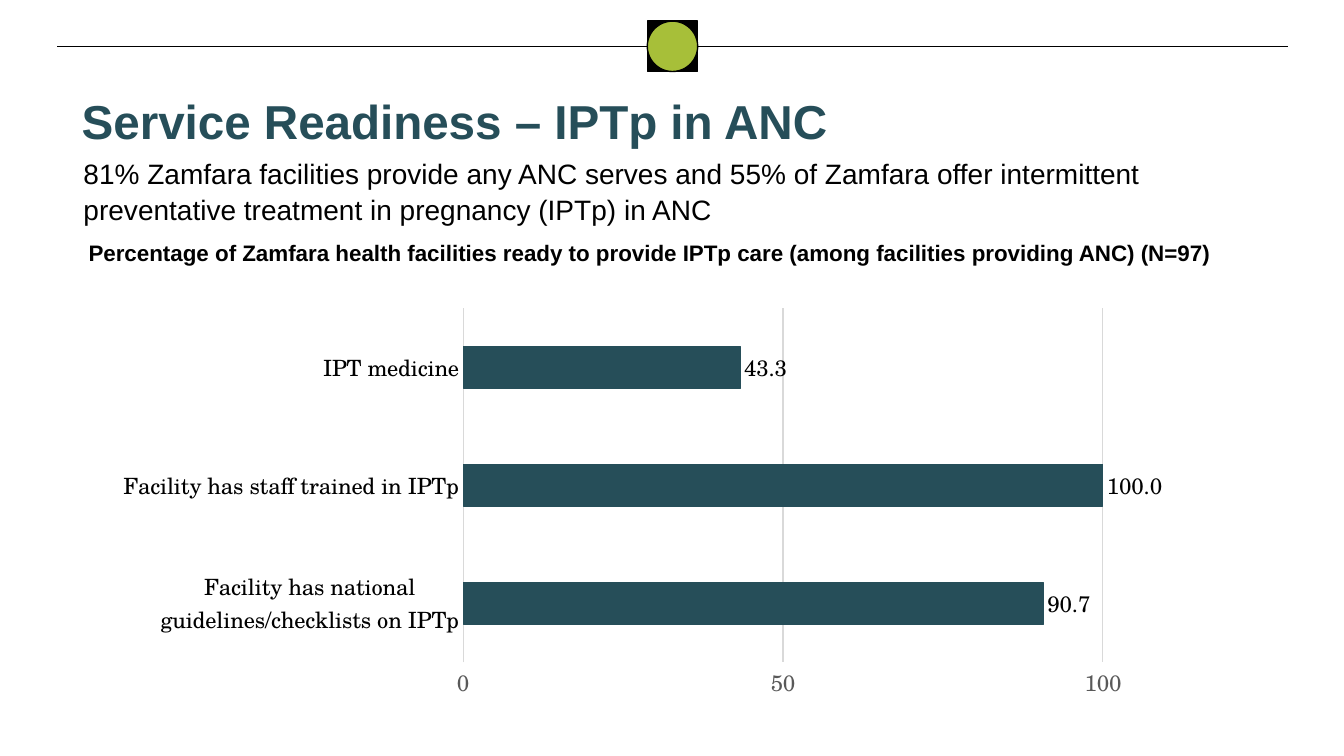
from lxml import etree
from pptx import Presentation
from pptx import util as u
from pptx.chart.data import CategoryChartData
from pptx.dml.color import RGBColor
from pptx.enum import chart as ce, shapes, text
from pptx.oxml import parse_xml
from pptx.oxml.ns import nsdecls, qn

PX = 9144  # EMU in one px, 100 px to the inch


class Theme:
    teal = RGBColor.from_string("264E59")
    lime = RGBColor.from_string("A7BF39")
    ink = RGBColor.from_string("000000")
    gray = RGBColor.from_string("595959")
    grid = RGBColor.from_string("D9D9D9")
    sans, serif = "Arial", "TeX Gyre Schola"
    title, lead, label = u.Pt(34), u.Pt(20), u.Pt(16)
    thin = u.Pt(0.75)


def style(font, name, size, color, bold=False):
    font.name, font.size, font.bold = name, size, bold
    font.color.rgb = color


def write(shape, words, size, color, bold, after=0, space=1.05):
    frame = shape.text_frame
    frame.word_wrap = True
    frame.auto_size = text.MSO_AUTO_SIZE.NONE
    frame.vertical_anchor = text.MSO_ANCHOR.TOP
    frame.text = words
    par = frame.paragraphs[0]
    par.alignment = text.PP_ALIGN.LEFT
    par.line_spacing, par.space_after = space, u.Pt(after)
    style(par.font, Theme.sans, size, color, bold)


deck = Presentation()
deck.slide_width, deck.slide_height = 1333 * PX, 750 * PX
slide = deck.slides.add_slide(deck.slide_layouts[5])

# Top rule with its round badge
rule = slide.shapes.add_connector(
    shapes.MSO_CONNECTOR.STRAIGHT, 57 * PX, 46 * PX, 1277 * PX, 46 * PX)
rule.line.color.rgb, rule.line.width = Theme.ink, Theme.thin
etree.SubElement(rule._element.spPr, qn("a:effectLst"))

for kind, fill in ((shapes.MSO_SHAPE.RECTANGLE, Theme.ink),
                   (shapes.MSO_SHAPE.OVAL, Theme.lime)):
    badge = slide.shapes.add_shape(kind, 642 * PX, 21 * PX, 50 * PX, 50 * PX)
    badge.shadow.inherit = False
    badge.fill.solid()
    badge.fill.fore_color.rgb = fill
    badge.line.color.rgb, badge.line.width = Theme.ink, u.Pt(1)

# Title
head = slide.shapes.title
head.left, head.top, head.width, head.height = (
    n * PX for n in (71, 86, 996, 91))
write(head, "Service Readiness – IPTp in ANC",
      Theme.title, Theme.teal, True, 8, 1.0)

# Lead text and chart heading
for box, words, size, bold, after in (
    ((73, 149, 1183, 77),
     "81% Zamfara facilities provide any ANC serves and 55% of Zamfara offer "
     "intermittent preventative treatment in pregnancy (IPTp) in ANC",
     Theme.lead, False, 6),
    ((78, 231, 1153, 37),
     "Percentage of Zamfara health facilities ready to provide IPTp care "
     "(among facilities providing ANC) (N=97)",
     Theme.label, True, 0),
):
    note = slide.shapes.add_textbox(*(n * PX for n in box))
    write(note, words, size, Theme.ink, bold, after)

# Bar chart
data = CategoryChartData(number_format="0.0")
data.categories = ["Facility has national guidelines/checklists on IPTp",
                   "Facility has staff trained in IPTp", "IPT medicine"]
data.add_series("Series 1", (90.7, 100, 43.3))
chart = slide.shapes.add_chart(
    ce.XL_CHART_TYPE.BAR_CLUSTERED,
    69 * PX, 288 * PX, 1128 * PX, 440 * PX, data).chart
chart.has_legend = chart.has_title = False
style(chart.font, Theme.serif, u.Pt(10), Theme.ink)

# Bars and their values
plot = chart.plots[0]
plot.gap_width, plot.vary_by_categories = 182, False
bars = plot.series[0].format
bars.fill.solid()
bars.fill.fore_color.rgb = bars.line.color.rgb = Theme.teal
bars.line.width = Theme.thin
plot.has_data_labels = True
tags = plot.data_labels
tags.show_value = True
tags.number_format, tags.number_format_is_linked = "0.0", False
tags.position = ce.XL_LABEL_POSITION.OUTSIDE_END
style(tags.font, Theme.serif, Theme.label, Theme.ink)

# Axes
cats, vals = chart.category_axis, chart.value_axis
for axis, color in ((cats, Theme.ink), (vals, Theme.gray)):
    axis.major_tick_mark = axis.minor_tick_mark = ce.XL_TICK_MARK.NONE
    style(axis.tick_labels.font, Theme.serif, Theme.label, color)
cats.has_major_gridlines = False
vals.has_major_gridlines = True
for line in (cats.format.line, vals.major_gridlines.format.line):
    line.color.rgb, line.width = Theme.grid, Theme.thin
vals.format.line.fill.background()
vals.minimum_scale, vals.maximum_scale, vals.major_unit = 0, 110, 50
vals.tick_labels.number_format = "0"
vals.tick_labels.number_format_is_linked = False

# Fixed plot area, as shares of the chart frame
area = chart._chartSpace.chart.plotArea
for old in area.findall(qn("c:layout")):
    area.remove(old)
parts = [("layoutTarget", "inner"), ("xMode", "edge"), ("yMode", "edge"),
         ("x", 0.346), ("y", 0.041), ("w", 0.619), ("h", 0.798)]
inner = "".join(f'<c:{tag} val="{val}"/>' for tag, val in parts)
area.insert(0, parse_xml(
    f'<c:layout {nsdecls("c")}><c:manualLayout>{inner}'
    '</c:manualLayout></c:layout>'))

deck.save("out.pptx")
